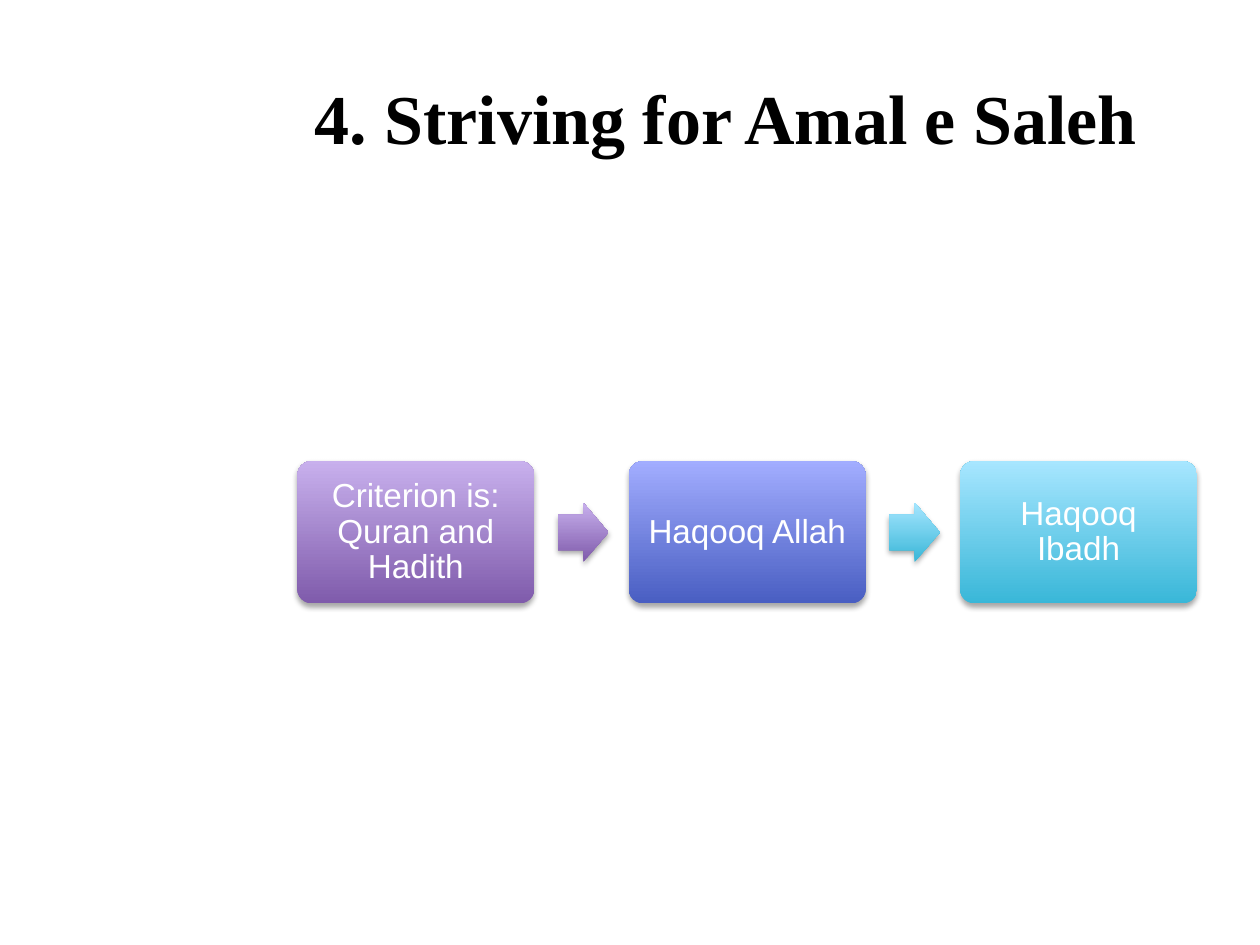
"""Build the slide on striving for Amal e Saleh."""
from lxml.etree import fromstring
from pptx import Presentation
from pptx.dml.color import RGBColor
from pptx.enum.shapes import MSO_SHAPE
from pptx.enum.text import MSO_ANCHOR, MSO_AUTO_SIZE, PP_ALIGN
from pptx.oxml.ns import nsdecls, qn
from pptx.util import Inches, Pt

BLACK = RGBColor(0x00, 0x00, 0x00)
WHITE = RGBColor(0xFF, 0xFF, 0xFF)
PURPLE = RGBColor(0x7F, 0x5B, 0xAB), RGBColor(0xC8, 0xB0, 0xED)
BLUE = RGBColor(0x49, 0x5E, 0xC2), RGBColor(0xA2, 0xAD, 0xFF)
CYAN = RGBColor(0x39, 0xB7, 0xD8), RGBColor(0xA7, 0xE6, 0xFF)

SHADOW = (
    f'<a:outerShdw {nsdecls("a")} blurRad="40000" dist="23000" dir="5400000" '
    'rotWithShape="0"><a:srgbClr val="000000"><a:alpha val="35000"/>'
    '</a:srgbClr></a:outerShdw>'
)


def add_block(kind, left, top, width, height, tones, adjust):
    block = slide.shapes.add_shape(
        kind, Inches(left), Inches(top), Inches(width), Inches(height))
    for i, value in enumerate(adjust):
        block.adjustments[i] = value
    block.fill.gradient()
    block.fill.gradient_angle = 90
    for stop, tone in zip(block.fill.gradient_stops, tones):
        stop.color.rgb = tone
    stops = block.fill.gradient_stops
    stops[0].position, stops[1].position = 0, 1
    block.line.fill.background()
    block.shadow.inherit = False
    block._element.spPr.find(qn("a:effectLst")).append(fromstring(SHADOW))
    return block


def set_text(shape, text, font, frame):
    box = shape.text_frame
    box.text = text
    for name, value in frame.items():
        setattr(box, name, value)
    para = box.paragraphs[0]
    para.alignment = PP_ALIGN.CENTER
    run = para.runs[0]
    run.font.color.rgb = font["color"]
    for name in ("name", "size", "bold"):
        setattr(run.font, name, font[name])
    return para


deck = Presentation()
deck.slide_width, deck.slide_height = Inches(10), Inches(7.5)
slide = deck.slides.add_slide(deck.slide_layouts[5])

title = slide.shapes.title
title.left, title.top = Inches(2.02), Inches(0.3)
title.width, title.height = Inches(7.48), Inches(1.25)
frame = {"word_wrap": True, "auto_size": MSO_AUTO_SIZE.NONE,
         "vertical_anchor": MSO_ANCHOR.MIDDLE}
set_text(title, "4. Striving for Amal e Saleh",
         {"name": "Times New Roman", "size": Pt(40), "bold": True, "color": BLACK},
         frame)

font = {"name": "Arial", "size": Pt(19), "bold": False, "color": WHITE}
sides = ("margin_left", "margin_top", "margin_right", "margin_bottom")
inset = frame | dict.fromkeys(sides, Inches(0.08))
steps = [
    ("Criterion is: Quran and Hadith", PURPLE, PURPLE),
    ("Haqooq Allah", BLUE, CYAN),
    ("Haqooq Ibadh", CYAN, None),
]
for i, (text, tones, next_tones) in enumerate(steps):
    left = 2.36 + i * 2.63
    card = add_block(MSO_SHAPE.ROUNDED_RECTANGLE, left, 3.66, 1.88, 1.13, tones, [0.1])
    set_text(card, text, font, inset).line_spacing = 0.9
    if next_tones:
        add_block(MSO_SHAPE.RIGHT_ARROW, left + 2.07, 3.99, 0.4, 0.47,
                  next_tones, [0.6, 0.5])

deck.save("out.pptx")
